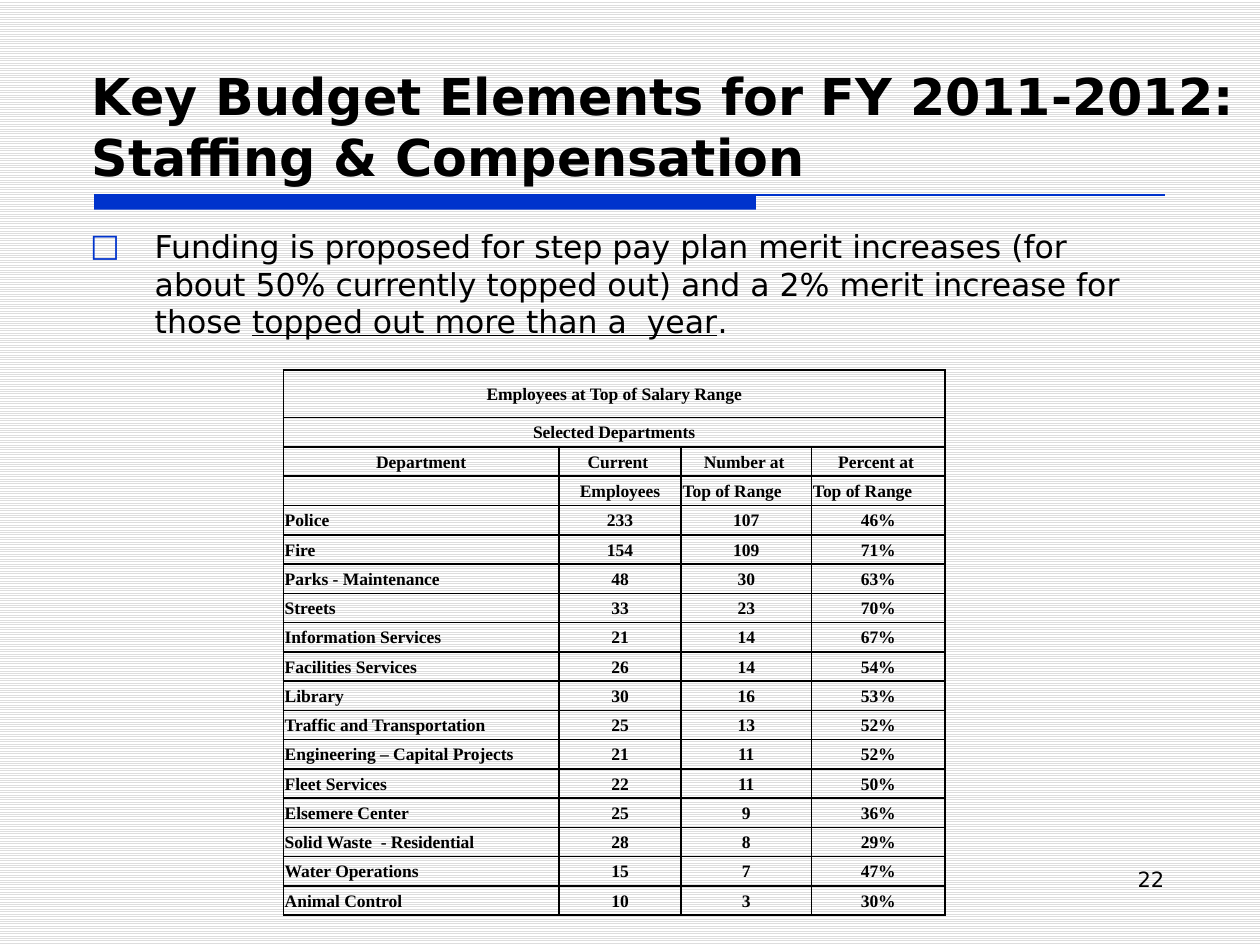
from lxml.etree import SubElement
from pptx import Presentation
from pptx.dml.color import RGBColor
from pptx.enum.dml import MSO_PATTERN
from pptx.enum.shapes import MSO_CONNECTOR, MSO_SHAPE
from pptx.enum.text import MSO_ANCHOR, PP_ALIGN
from pptx.oxml.ns import qn
from pptx.util import Cm, Pt

TITLE = "Key Budget Elements for FY 2011-2012:\vStaffing & Compensation"
FUNDING = [
    ("Funding is proposed for step pay plan merit increases (for about 50% "
     "currently topped out) and a 2% merit increase for those ", False),
    ("topped out more than a  year", True),
    (".", False),
]
PAGE_NUMBER = "22"
BANNERS = ["Employees at Top of Salary Range", "Selected Departments"]
HEADINGS = [
    ("Department", "Current ", "Number at ", "Percent at "),
    ("", "Employees", "Top of Range", "Top of Range"),
]
DEPARTMENTS = [
    ("Police", 233, 107, "46%"),
    ("Fire", 154, 109, "71%"),
    ("Parks - Maintenance", 48, 30, "63%"),
    ("Streets", 33, 23, "70%"),
    ("Information Services", 21, 14, "67%"),
    ("Facilities Services", 26, 14, "54%"),
    ("Library", 30, 16, "53%"),
    ("Traffic and Transportation", 25, 13, "52%"),
    ("Engineering – Capital Projects", 21, 11, "52%"),
    ("Fleet Services", 22, 11, "50%"),
    ("Elsemere Center", 25, 9, "36%"),
    ("Solid Waste  - Residential", 28, 8, "29%"),
    ("Water Operations", 15, 7, "47%"),
    ("Animal Control", 10, 3, "30%"),
]

THEME = {
    "ink": RGBColor(0, 0, 0),
    "accent": RGBColor(0x00, 0x33, 0xCC),
    "stripe": RGBColor(0xDD, 0xDD, 0xDD),
    "paper": RGBColor(0xFF, 0xFF, 0xFF),
    "font": "DejaVu Sans",
    "table_font": "Times New Roman",
    "title": Pt(29),
    "body": Pt(18),
    "number": Pt(12),
    "table": Pt(10),
    "rule": Pt(0.75),
    "border": Pt(1),
}
COLUMN_WIDTHS = [Cm(5.56), Cm(2.46), Cm(2.63), Cm(2.69)]
BANNER_HEIGHT, ROW_HEIGHT = Cm(0.96), Cm(0.59)
RULE_LEFT, RULE_TOP = Cm(1.9), Cm(3.93)


def style(font, size, name=THEME["font"], bold=False):
    font.size, font.name, font.bold = size, name, bold
    font.color.rgb = THEME["ink"]


def add_bullet(paragraph, mark):
    properties = paragraph._p.get_or_add_pPr()
    properties.set("marL", str(Cm(1.3)))
    properties.set("indent", str(-Cm(1.3)))
    color = SubElement(properties, qn("a:buClr"))
    SubElement(color, qn("a:srgbClr"), val=str(THEME["accent"]))
    SubElement(properties, qn("a:buFont"), typeface=THEME["font"])
    SubElement(properties, qn("a:buChar"), char=mark)


def add_title(slide):
    title = slide.shapes.title
    title.left, title.top, title.width, title.height = Cm(1.6), Cm(0.84), Cm(23.62), Cm(3.38)
    frame = title.text_frame
    frame.text = TITLE
    frame.word_wrap = True
    frame.margin_right = 0
    frame.vertical_anchor = MSO_ANCHOR.MIDDLE
    paragraph = frame.paragraphs[0]
    paragraph.alignment = PP_ALIGN.LEFT
    paragraph.line_spacing = 1.0
    for run in paragraph.runs:
        style(run.font, THEME["title"], bold=True)


def add_rule(slide):
    bar = slide.shapes.add_shape(MSO_SHAPE.RECTANGLE, RULE_LEFT, RULE_TOP, Cm(13.34), Cm(0.3))
    bar.shadow.inherit = False
    bar.fill.solid()
    bar.fill.fore_color.rgb = THEME["accent"]
    bar.line.fill.background()
    rule = slide.shapes.add_connector(
        MSO_CONNECTOR.STRAIGHT, RULE_LEFT, RULE_TOP, RULE_LEFT + Cm(21.59), RULE_TOP)
    rule.line.color.rgb = THEME["accent"]
    rule.line.width = THEME["rule"]
    SubElement(rule._element.spPr, qn("a:effectLst"))


def add_text(slide, box, parts, size, alignment):
    frame = slide.shapes.add_textbox(*box).text_frame
    frame.word_wrap = True
    paragraph = frame.paragraphs[0]
    paragraph.alignment = alignment
    for text, underlined in parts:
        run = paragraph.add_run()
        run.text = text
        style(run.font, size)
        run.font.underline = underlined
    return paragraph


def add_borders(cell):
    properties = cell._tc.get_or_add_tcPr()
    for side in ("lnL", "lnR", "lnT", "lnB"):
        border = SubElement(properties, qn(f"a:{side}"), w=str(THEME["border"]))
        fill = SubElement(border, qn("a:solidFill"))
        SubElement(fill, qn("a:srgbClr"), val=str(THEME["ink"]))


def format_cell(cell, text, alignment):
    cell.text = text
    cell.margin_left = cell.margin_top = cell.margin_right = Cm(0.03)
    cell.margin_bottom = 0
    cell.vertical_anchor = MSO_ANCHOR.MIDDLE
    add_borders(cell)
    cell.fill.background()
    paragraph = cell.text_frame.paragraphs[0]
    paragraph.alignment = alignment
    for run in paragraph.runs:
        style(run.font, THEME["table"], THEME["table_font"], True)
    if not text:
        SubElement(paragraph._p, qn("a:endParaRPr"), sz=str(int(THEME["table"].pt * 100)))


def add_salary_table(slide):
    rows = [(banner, "", "", "") for banner in BANNERS] + HEADINGS + DEPARTMENTS
    heights = [BANNER_HEIGHT] + [ROW_HEIGHT] * (len(rows) - 1)
    table = slide.shapes.add_table(
        len(rows), len(COLUMN_WIDTHS), Cm(5.71), Cm(7.46),
        sum(COLUMN_WIDTHS), sum(heights)).table
    table.first_row = table.horz_banding = False
    for column, width in zip(table.columns, COLUMN_WIDTHS):
        column.width = width
    first_department = len(BANNERS) + len(HEADINGS)
    for r, (values, height) in enumerate(zip(rows, heights)):
        table.rows[r].height = height
        for c, value in enumerate(values):
            at_left = value == "Top of Range" or (c == 0 and r >= first_department)
            format_cell(table.cell(r, c), str(value),
                        PP_ALIGN.LEFT if at_left else PP_ALIGN.CENTER)
    for r in range(len(BANNERS)):
        table.cell(r, 0).merge(table.cell(r, len(COLUMN_WIDTHS) - 1))


def main():
    deck = Presentation()
    deck.slide_width, deck.slide_height = Cm(25.4), Cm(19.05)
    slide = deck.slides.add_slide(deck.slide_layouts[5])
    background = slide.background.fill
    background.patterned()
    background.pattern = MSO_PATTERN.LIGHT_HORIZONTAL
    background.fore_color.rgb = THEME["stripe"]
    background.back_color.rgb = THEME["paper"]

    add_rule(slide)
    add_title(slide)
    funding = add_text(slide, (Cm(1.57), Cm(4.45), Cm(22.23), Cm(2.7)),
                       FUNDING, THEME["body"], PP_ALIGN.LEFT)
    funding.space_before = Pt(3.6)
    add_bullet(funding, "□")
    add_text(slide, (Cm(18.21), Cm(17.35), Cm(5.51), Cm(1.32)),
             [(PAGE_NUMBER, False)], THEME["number"], PP_ALIGN.RIGHT)
    add_salary_table(slide)
    deck.save("out.pptx")


if __name__ == "__main__":
    main()
